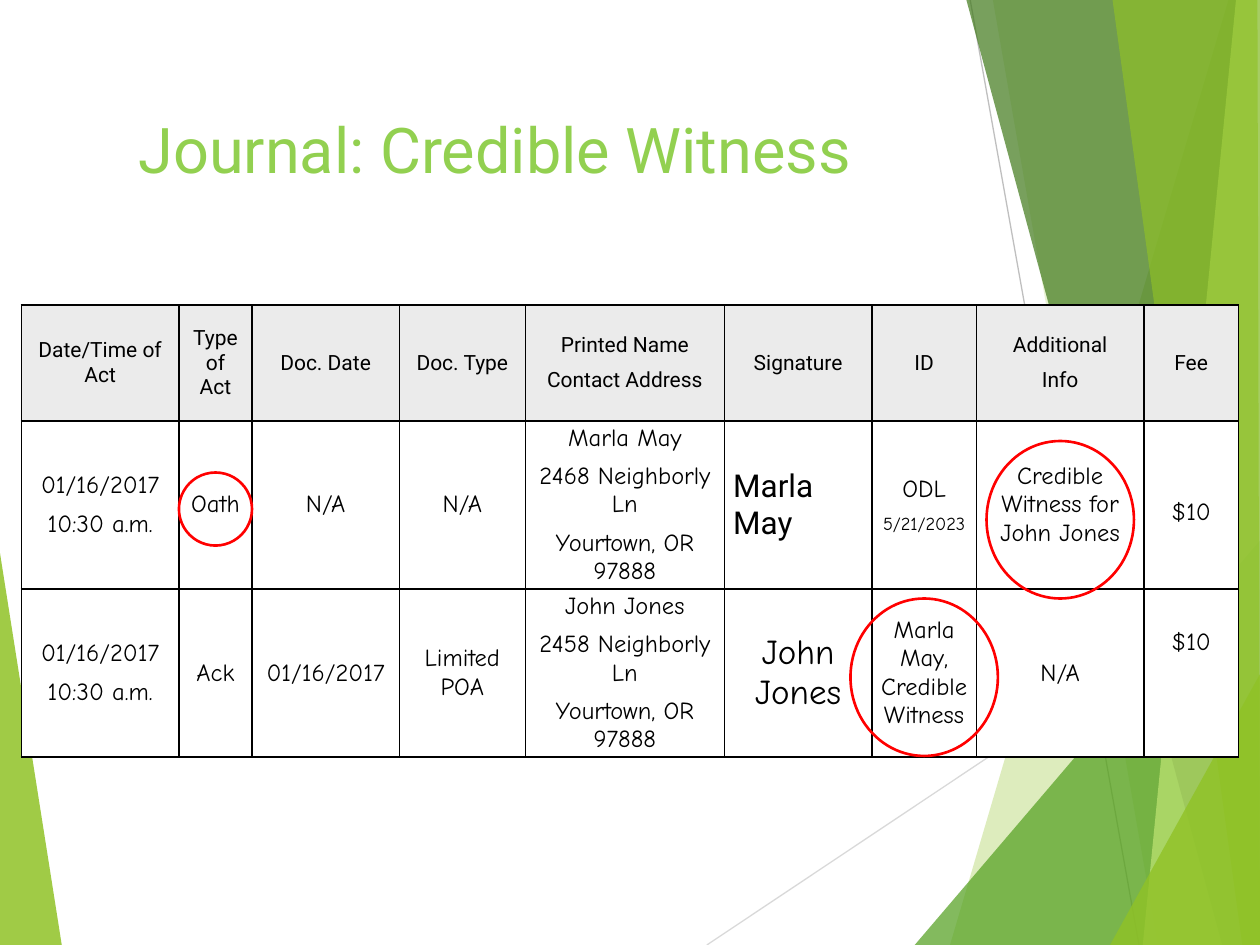
from dataclasses import dataclass
from typing import NamedTuple, Optional

from pptx import Presentation
from pptx import util as u
from pptx.dml.color import RGBColor
from pptx.enum import shapes, text
from pptx.oxml import ns
from lxml import etree


@dataclass(frozen=True)
class Theme:
    title: str = "92D050"
    ink: str = "000000"
    header: str = "EBEBEB"
    body: str = "FFFFFF"
    mark: str = "FF0000"
    green: str = "90C226"
    mid_green: str = "54A021"
    dark_green: str = "3F7819"
    pale_green: str = "C0E474"
    sans: str = "Roboto"
    hand: str = "Comic Neue"
    title_size: float = 36
    header_size: float = 12
    body_size: float = 14
    note_size: float = 10.5
    signature_size: float = 18
    large_signature_size: float = 20


T = Theme()


class Facet(NamedTuple):
    points: list
    color: str
    opacity: int


class Ray(NamedTuple):
    start: tuple
    end: tuple
    color: str


class Ring(NamedTuple):
    x: float
    y: float
    w: float
    h: float


@dataclass(frozen=True)
class Entry:
    lines: tuple
    size: float = T.body_size
    font: str = T.hand
    align: text.PP_ALIGN = text.PP_ALIGN.CENTER
    last_size: Optional[float] = None
    top: Optional[float] = None


def entry(*lines: str, **style) -> Entry:
    return Entry(lines, **style)


def heading(*lines: str) -> Entry:
    return Entry(lines, size=T.header_size, font=T.sans)


LEFT_FACET = Facet([(0, 4.39), (0.49, 7.5), (0, 7.5)], T.green, 85)
RAYS = [
    Ray((5.61, 7.5), (10, 4.57), "D9D9D9"),
    Ray((7.7, 0), (9.04, 7.5), "BFBFBF"),
]
RIGHT_FACETS = [
    Facet([(9.75, 0), (7.54, 7.5), (10, 7.5), (10, 0)], T.green, 30),
    Facet([(7.88, 0), (9.19, 7.5), (10, 7.5), (10, 0)], T.green, 20),
    Facet([(7.26, 7.5), (10, 4.29), (10, 7.5)], T.mid_green, 72),
    Facet([(7.67, 0), (9.7, 7.5), (10, 7.5), (10, 0)], T.dark_green, 70),
    Facet([(9.81, 0), (9.07, 7.5), (10, 7.5), (10, 0)], T.pale_green, 70),
    Facet([(8.83, 0), (9.86, 7.5), (10, 7.5), (9.98, 0)], T.green, 65),
    Facet([(8.81, 7.5), (10, 5.35), (10, 7.5)], T.green, 80),
]
RINGS = [
    Ring(6.75, 4.75, 1.17, 1.25),
    Ring(1.42, 3.75, 0.58, 0.58),
    Ring(7.83, 3.5, 1.17, 1.25),
]
COLUMNS = [1.25, 0.58, 1.17, 1, 1.58, 1.17, 0.83, 1.33, 0.75]
ROWS = [0.92, 1, 1]
JOURNAL = [
    [
        heading("Date/Time of Act"), heading("Type of Act"),
        heading("Doc. Date"), heading("Doc. Type"),
        heading("Printed Name", "Contact Address"), heading("Signature"),
        heading("ID"), heading("Additional", "Info"), heading("Fee"),
    ],
    [
        entry("01/16/2017", "10:30 a.m."), entry("Oath"),
        entry("N/A"), entry("N/A"),
        entry("Marla May", "2468 Neighborly Ln", "Yourtown, OR 97888"),
        entry("Marla May", size=T.signature_size, font=T.sans,
              align=text.PP_ALIGN.LEFT),
        entry("ODL", "5/21/2023", last_size=T.note_size),
        entry("Credible Witness for John Jones"), entry("$10", top=0.62),
    ],
    [
        entry("01/16/2017", "10:30 a.m."), entry("Ack"),
        entry("01/16/2017"), entry("Limited POA"),
        entry("John Jones", "2458 Neighborly Ln", "Yourtown, OR 97888"),
        entry("John Jones", size=T.large_signature_size),
        entry("Marla May, Credible Witness"),
        entry("N/A"), entry("$10", top=0.31),
    ],
]


def rgb(color: str) -> RGBColor:
    return RGBColor.from_string(color)


def draw_facet(s, facet: Facet) -> None:
    start, *rest = [(u.Inches(x), u.Inches(y)) for x, y in facet.points]
    fb = s.shapes.build_freeform(*start)
    fb.add_line_segments(rest, close=True)
    sp = fb.convert_to_shape()
    sp.shadow.inherit = False
    sp.fill.solid()
    sp.fill.fore_color.rgb = rgb(facet.color)
    sp.line.fill.background()
    color = sp._element.spPr.find(".//" + ns.qn("a:srgbClr"))
    etree.SubElement(color, ns.qn("a:alpha"), val=str(facet.opacity * 1000))


def draw_ray(s, ray: Ray) -> None:
    cx = s.shapes.add_connector(
        shapes.MSO_CONNECTOR.STRAIGHT,
        *(u.Inches(v) for v in ray.start + ray.end))
    cx.line.color.rgb = rgb(ray.color)
    cx.line.width = u.Pt(0.75)
    etree.SubElement(cx._element.spPr, ns.qn("a:effectLst"))


def draw_ring(s, ring: Ring) -> None:
    sp = s.shapes.add_shape(
        shapes.MSO_SHAPE.OVAL, *(u.Inches(v) for v in ring))
    sp.shadow.inherit = False
    sp.fill.background()
    sp.line.color.rgb = rgb(T.mark)
    sp.line.width = u.Pt(1.5)


def set_font(p, name: str, size: float, color: str) -> None:
    p.font.name = name
    p.font.size = u.Pt(size)
    p.font.color.rgb = rgb(color)
    p._p.get_or_add_endParaRPr().set("sz", str(int(size * 100)))


def draw_title(s, title: str) -> None:
    sp = s.shapes.add_textbox(
        u.Inches(1), u.Inches(0.83), u.Inches(8.75), u.Inches(1.25))
    tf = sp.text_frame
    tf.word_wrap = True
    p = tf.paragraphs[0]
    p.text = title
    set_font(p, T.sans, T.title_size, T.title)


def add_borders(cell) -> None:
    props = cell._tc.get_or_add_tcPr()
    for side in ("lnL", "lnR", "lnT", "lnB"):
        ln = etree.SubElement(props, ns.qn("a:" + side), w=str(u.Pt(1)))
        fill = etree.SubElement(ln, ns.qn("a:solidFill"))
        etree.SubElement(fill, ns.qn("a:srgbClr"), val=T.ink)


def fill_cell(cell, item: Entry, color: str) -> None:
    add_borders(cell)
    cell.fill.solid()
    cell.fill.fore_color.rgb = rgb(color)
    cell.margin_left = cell.margin_right = u.Inches(0.07)
    cell.margin_top = u.Inches(item.top or 0)
    cell.margin_bottom = 0
    cell.vertical_anchor = (text.MSO_ANCHOR.TOP if item.top
                            else text.MSO_ANCHOR.MIDDLE)
    tf = cell.text_frame
    tf.text = "\n".join(item.lines)
    for p in tf.paragraphs:
        p.alignment = item.align
        p.space_after = u.Pt(6)
        set_font(p, item.font, item.size, T.ink)
    if item.last_size:
        set_font(p, item.font, item.last_size, T.ink)


def draw_journal(s) -> None:
    table = s.shapes.add_table(
        len(ROWS), len(COLUMNS), u.Inches(0.17), u.Inches(2.42),
        u.Inches(sum(COLUMNS)), u.Inches(sum(ROWS))).table
    table.first_row = table.horz_banding = False
    for column, width in zip(table.columns, COLUMNS):
        column.width = u.Inches(width)
    for i, (row, height) in enumerate(zip(table.rows, ROWS)):
        row.height = u.Inches(height)
        for cell, item in zip(row.cells, JOURNAL[i]):
            fill_cell(cell, item, T.body if i else T.header)


def main() -> None:
    prs = Presentation()
    prs.slide_width, prs.slide_height = u.Inches(10), u.Inches(7.5)
    s = prs.slides.add_slide(prs.slide_layouts[6])
    draw_facet(s, LEFT_FACET)
    for ray in RAYS:
        draw_ray(s, ray)
    for facet in RIGHT_FACETS:
        draw_facet(s, facet)
    draw_title(s, "Journal: Credible Witness")
    draw_journal(s)
    for ring in RINGS:
        draw_ring(s, ring)
    prs.save("out.pptx")


if __name__ == "__main__":
    main()
